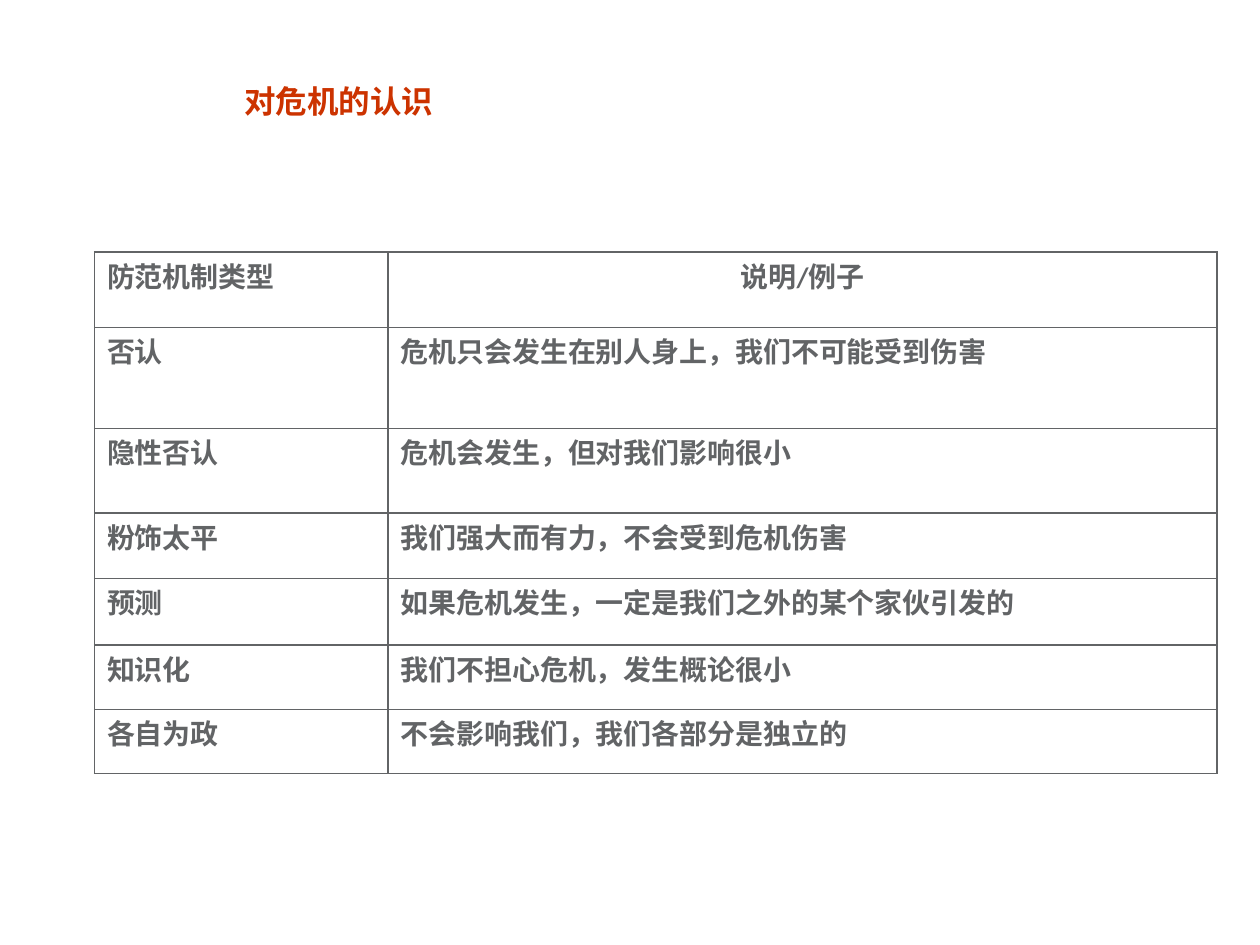
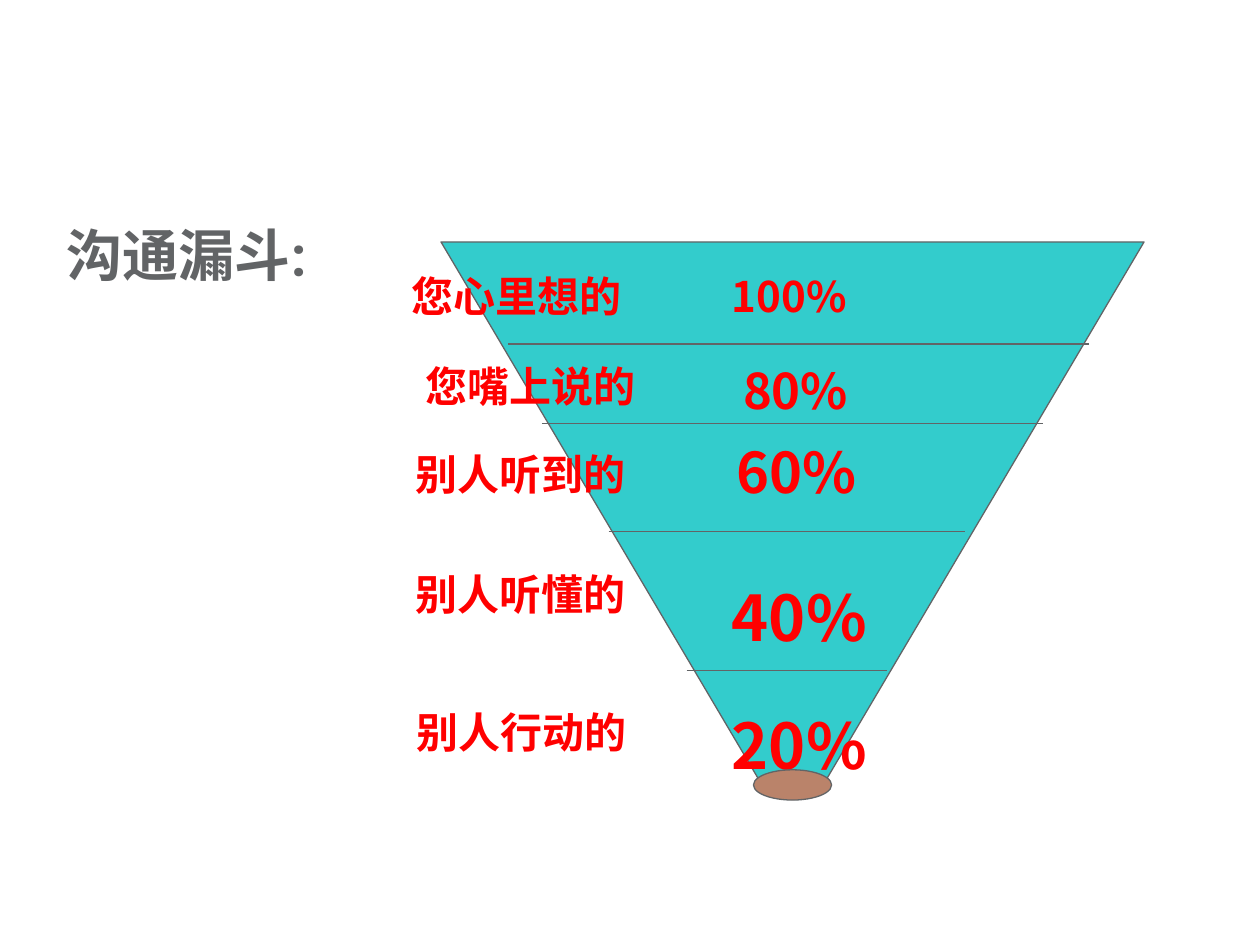
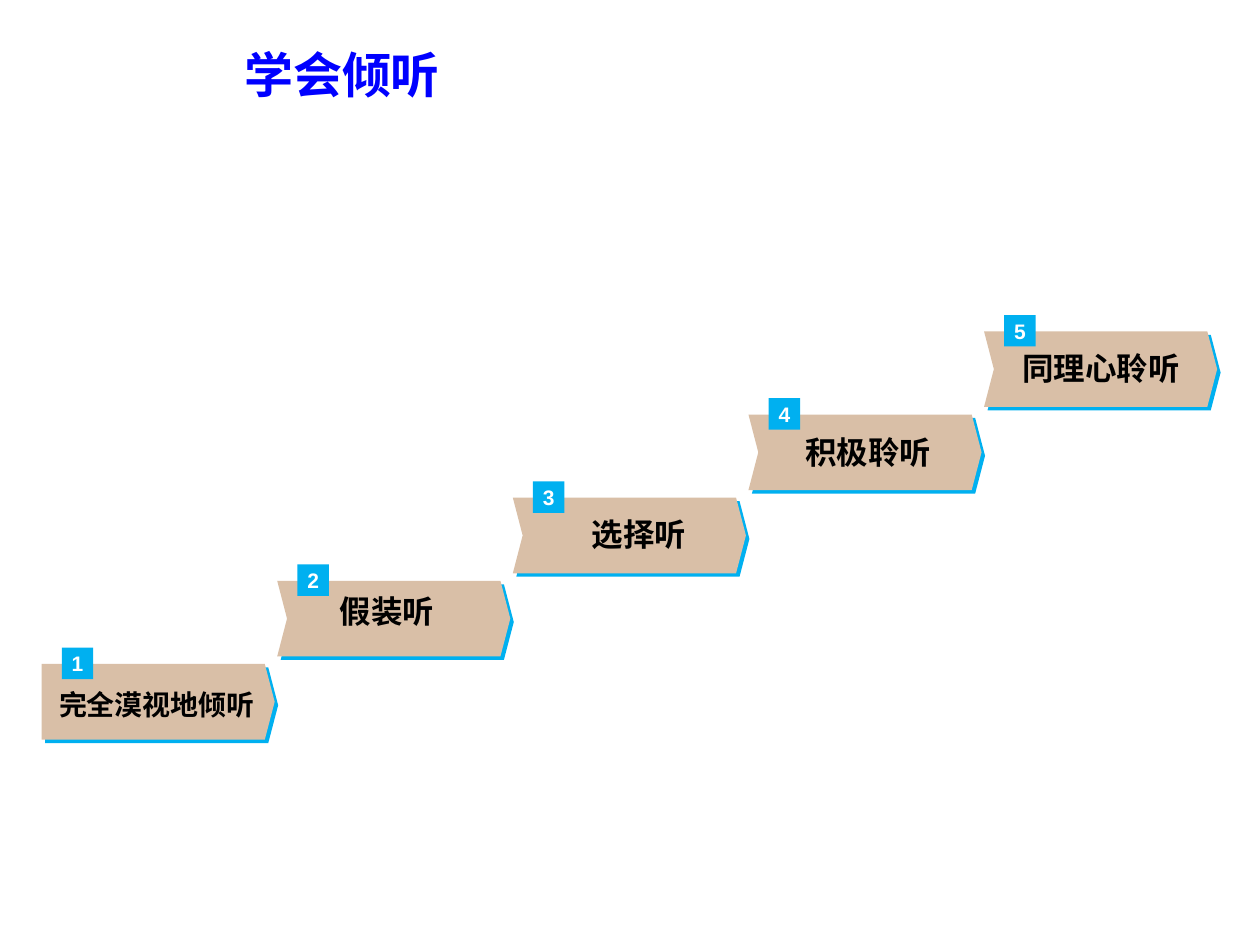
from lxml import etree
from pptx import Presentation
from pptx.dml.color import RGBColor
from pptx.enum.shapes import MSO_CONNECTOR, MSO_SHAPE
from pptx.enum.text import MSO_ANCHOR, PP_ALIGN
from pptx.oxml import parse_xml
from pptx.oxml.ns import nsdecls, qn
from pptx.util import Inches, Pt

LEFT, CENTER = PP_ALIGN.LEFT, PP_ALIGN.CENTER
TOP, MIDDLE = MSO_ANCHOR.TOP, MSO_ANCHOR.MIDDLE
RECTANGLE, ELLIPSE = MSO_SHAPE.RECTANGLE, MSO_SHAPE.OVAL
TRIANGLE = MSO_SHAPE.ISOSCELES_TRIANGLE
PENTAGON, CHEVRON = MSO_SHAPE.PENTAGON, MSO_SHAPE.CHEVRON
STRAIGHT = MSO_CONNECTOR.STRAIGHT

GREY, WHITE, BLACK, RED = "626466", "FFFFFF", "000000", "FF0000"
RUST, BLUE, SKY, SAND = "CC3300", "0000FF", "00B0F0", "D9BFA7"
TEAL, CLAY = "33CCCC", "BA836A"

DEFENCES = [
    ("防范机制类型", "说明/例子"),
    ("否认", "危机只会发生在别人身上，我们不可能受到伤害"),
    ("隐性否认", "危机会发生，但对我们影响很小"),
    ("粉饰太平", "我们强大而有力，不会受到危机伤害"),
    ("预测", "如果危机发生，一定是我们之外的某个家伙引发的"),
    ("知识化", "我们不担心危机，发生概论很小"),
    ("各自为政", "不会影响我们，我们各部分是独立的"),
]
COLUMN_WIDTHS = [2.33, 6.58]
ROW_HEIGHTS = [0.6, 0.8, 0.67, 0.52, 0.53, 0.51, 0.51]

DIVIDERS = [(0.53, 5.14, 0.81), (0.8, 4.78, 1.44), (1.33, 4.16, 2.3), (1.95, 3.54, 3.4)]
STAGES = [
    ("您心里想的", -0.33, 0.18, "100%", 2.21, 0.18, 24),
    ("您嘴上说的", -0.22, 0.89, "80%", 2.3, 0.89, 28),
    ("别人听到的", -0.3, 1.59, "60%", 2.25, 1.5, 32),
    ("别人听懂的", -0.3, 2.54, "40%", 2.21, 2.62, 36),
    ("别人行动的", -0.29, 3.64, "20%", 2.21, 3.64, 36),
]

LISTENING = [
    ("完全漠视地倾听", 16, 0.1, 0.17, 1.63),
    ("假装听", 18, 0.13, 0.09, 1.48),
    ("选择听", 18, 0.26, 0.14, 1.48),
    ("积极聆听", 18, 0.21, 0.15, 1.48),
    ("同理心聆听", 18, 0.19, 0.14, 1.48),
]


def color(value):
    return RGBColor.from_string(value)


def write(frame, text, size=18, font="Arial", ink=BLACK, align=LEFT,
          anchor=TOP, spacing=None, inset=None):
    frame.word_wrap = True
    frame.vertical_anchor = anchor
    if inset is not None:
        frame.margin_left = frame.margin_right = Inches(inset)
        frame.margin_top = frame.margin_bottom = Inches(inset)
    paragraph = frame.paragraphs[0]
    paragraph.alignment = align
    if spacing:
        paragraph.line_spacing = spacing
    run = paragraph.add_run()
    run.text = text
    run.font.name = font
    run.font.size = Pt(size)
    run.font.bold = True
    run.font.color.rgb = color(ink)


def add_text(slide, box, text, **style):
    label = slide.shapes.add_textbox(*map(Inches, box))
    write(label.text_frame, text, **style)


def add_block(slide, preset, box, fill, line=None):
    block = slide.shapes.add_shape(preset, *map(Inches, box))
    block.shadow.inherit = False
    block.fill.solid()
    block.fill.fore_color.rgb = color(fill)
    if line:
        block.line.color.rgb = color(line)
        block.line.width = Pt(0.75)
    else:
        block.line.fill.background()
    return block


def add_title(slide, top, text, **style):
    add_text(slide, (1.84, top, 7.57, 0.71), text, font="Karla", **style)


def add_rule(slide, left, right, y):
    rule = slide.shapes.add_connector(
        STRAIGHT, Inches(left), Inches(y), Inches(right), Inches(y))
    rule.line.color.rgb = color(GREY)
    rule.line.width = Pt(0.75)
    etree.SubElement(rule._element.spPr, qn("a:effectLst"))


def outline_cell(cell):
    properties = cell._tc.get_or_add_tcPr()
    for side in "LRTB":
        properties.append(parse_xml(
            f'<a:ln{side} {nsdecls("a")} w="12700"><a:solidFill>'
            f'<a:srgbClr val="{GREY}"/></a:solidFill></a:ln{side}>'))


def cast_shadow(block):
    effects = block._element.spPr.find(qn("a:effectLst"))
    effects.append(parse_xml(
        f'<a:outerShdw {nsdecls("a")} dist="{Pt(2.8)}" dir="2700000" '
        f'algn="ctr" rotWithShape="0"><a:srgbClr val="{SKY}"/></a:outerShdw>'))


def defence_table(slide, left, top):
    box = (left, top, sum(COLUMN_WIDTHS), sum(ROW_HEIGHTS))
    table = slide.shapes.add_table(
        len(DEFENCES), len(COLUMN_WIDTHS), *map(Inches, box)).table
    table.first_row = table.horz_banding = False
    for column, width in zip(table.columns, COLUMN_WIDTHS):
        column.width = Inches(width)
    for row, height in zip(table.rows, ROW_HEIGHTS):
        row.height = Inches(height)
    for r, entries in enumerate(DEFENCES):
        for c, entry in enumerate(entries):
            cell = table.cell(r, c)
            outline_cell(cell)
            cell.fill.background()
            write(cell.text_frame, entry, size=16, font="Calibri", ink=GREY,
                  align=CENTER if (r, c) == (0, 1) else LEFT, spacing=0.9)


def funnel(slide, left, top, width, height):
    cone = add_block(slide, TRIANGLE, (left, top, width, height), TEAL, GREY)
    cone.rotation = 180
    for start, end, drop in DIVIDERS:
        add_rule(slide, left + start, left + end, top + drop)
    for stage, stage_x, stage_y, share, share_x, share_y, size in STAGES:
        add_text(slide, (left + share_x, top + share_y, 1.8, 0.02 * size),
                 share, size=size, font="Noto Sans CJK SC", ink=RED)
        add_text(slide, (left + stage_x, top + stage_y, 2.3, 0.5),
                 stage, size=24, font="Roboto", ink=RED)
    add_block(slide, RECTANGLE, (left + 1.59, top + 4.35, 2.48, 0.39), WHITE, WHITE)
    add_block(slide, ELLIPSE, (left + 2.48, top + 4.19, 0.62, 0.24), CLAY, GREY)


def listening_steps(slide, left, bottom_step):
    for i, (level, size, dx, dy, width) in enumerate(LISTENING):
        x, y = left + 1.87 * i, bottom_step - 0.66 * i
        step = add_block(slide, CHEVRON if i else PENTAGON, (x, y, 1.85, 0.6), SAND)
        step.adjustments[0] = 0.13
        cast_shadow(step)
        add_text(slide, (x + dx, y + dy, width, 0.3), level, size=size,
                 align=CENTER, anchor=MIDDLE, inset=0)
        badge = add_block(slide, RECTANGLE, (x + 0.16, y - 0.13, 0.25, 0.25), SKY)
        write(badge.text_frame, str(i + 1), size=12, ink=WHITE,
              align=CENTER, anchor=MIDDLE, inset=0)


def crisis_slide(slide):
    add_title(slide, 0.57, "对危机的认识", size=18, ink=RUST, spacing=1.1)
    defence_table(slide, 0.75, 2)


def funnel_slide(slide):
    funnel(slide, 3.5, 1.92, 5.58, 4.72)
    heading = add_block(slide, RECTANGLE, (0.43, 1.7, 2.36, 0.63), WHITE)
    write(heading.text_frame, "沟通漏斗:", size=32, font="Roboto", ink=GREY)


def listening_slide(slide):
    add_title(slide, 0.36, "学会倾听", size=28, ink=BLUE, spacing=0.9)
    listening_steps(slide, 0.33, 5.27)


def main():
    deck = Presentation()
    deck.slide_width, deck.slide_height = Inches(10), Inches(7.5)
    for build in (crisis_slide, funnel_slide, listening_slide):
        build(deck.slides.add_slide(deck.slide_layouts[6]))
    deck.save("out.pptx")


if __name__ == "__main__":
    main()
